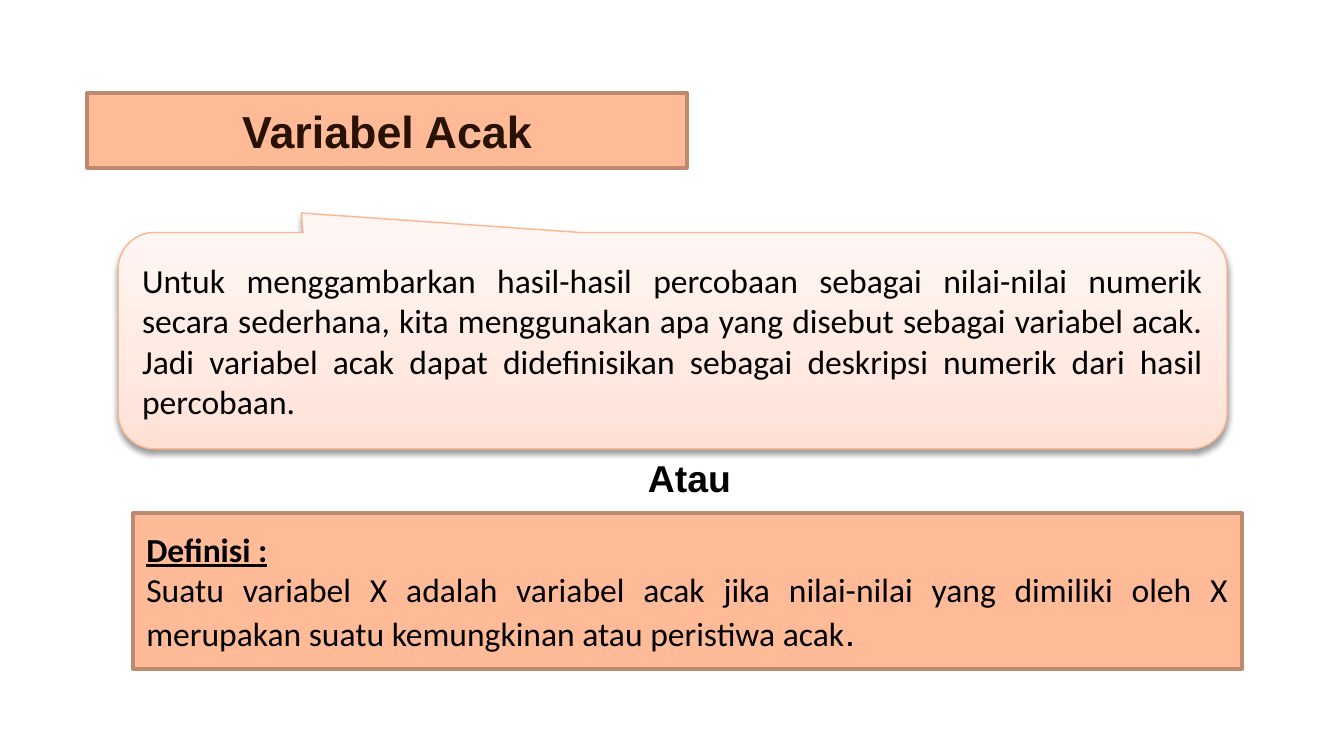
from copy import deepcopy
from dataclasses import dataclass
from typing import Optional

from lxml.etree import SubElement
from pptx import Presentation
from pptx.dml.color import RGBColor as Color
from pptx.enum.shapes import MSO_SHAPE as Shape
from pptx.enum.text import MSO_ANCHOR as Anchor, MSO_AUTO_SIZE as AutoSize, PP_ALIGN as Align
from pptx.oxml.ns import qn
from pptx.util import Inches, Pt


@dataclass(frozen=True)
class Theme:
    heading_font: str = "Arial"
    body_font: str = "Calibri"
    heading_size: int = 24
    link_size: int = 20
    body_size: int = 18
    ink: str = "000000"
    heading_ink: str = "291202"
    panel: str = "FFBB98"
    panel_edge: str = "BD8A70"
    callout_edge: str = "FCB692"
    callout_stops: tuple = ((0, "FFE0D4"), (0.35, "FFE9E0"), (1, "FFF6F3"))


THEME = Theme()
PAGE_WIDTH = 10
PAGE_HEIGHT = PAGE_WIDTH * 9 / 16


@dataclass(frozen=True)
class Span:
    text: str
    format: dict


@dataclass(frozen=True)
class Box:
    left: float
    top: float
    width: float
    height: float
    paragraphs: list[list[Span]]
    align: Align
    shape: Optional[Shape] = Shape.RECTANGLE
    edge: str = THEME.panel_edge
    edge_width: float = 2
    adjustments: tuple = ()


def style(name: str, size: int, ink: str = THEME.ink, **extra) -> dict:
    return {"name": name, "size": Pt(size), "color": ink, **extra}


HEADING = style(THEME.heading_font, THEME.heading_size, THEME.heading_ink, bold=True)
LINK = style(THEME.heading_font, THEME.link_size, bold=True)
BODY = style(THEME.body_font, THEME.body_size)
TERM = {**BODY, "bold": True, "underline": True}
FULL_STOP = style(THEME.heading_font, THEME.link_size)

TITLE = Box(0.65, 0.69, 4.46, 0.56, [[Span("Variabel Acak", HEADING)]], Align.CENTER)
CALLOUT = Box(
    0.88, 1.73, 8.25, 1.61,
    [[Span(
        "Untuk menggambarkan hasil-hasil percobaan sebagai nilai-nilai numerik "
        "secara sederhana, kita menggunakan apa yang disebut sebagai variabel acak. "
        "Jadi variabel acak dapat didefinisikan sebagai deskripsi numerik dari hasil "
        "percobaan.", BODY)]],
    Align.JUSTIFY, Shape.ROUNDED_RECTANGULAR_CALLOUT, THEME.callout_edge, 0.75,
    (-0.335, -0.59, 0.167),
)
DEFINITION = Box(
    0.99, 3.82, 8.25, 1.16,
    [
        [Span("Definisi :", TERM)],
        [
            Span("Suatu variabel X adalah variabel acak jika nilai-nilai yang dimiliki "
                 "oleh X merupakan suatu kemungkinan atau peristiwa acak", BODY),
            Span(".", FULL_STOP),
        ],
    ],
    Align.JUSTIFY,
)
OR_LABEL = Box(4.49, 3.34, 1.28, 0.44, [[Span("Atau", LINK)]], Align.CENTER, None)


def write(frame, box: Box) -> None:
    frame.word_wrap = True
    for index, spans in enumerate(box.paragraphs):
        para = frame.add_paragraph() if index else frame.paragraphs[0]
        para.alignment = box.align
        for span in spans:
            run = para.add_run()
            run.text = span.text
            for key, value in span.format.items():
                if key == "color":
                    run.font.color.rgb = Color.from_string(value)
                else:
                    setattr(run.font, key, value)


def draw_box(slide, box: Box):
    lengths = [Inches(value) for value in (box.left, box.top, box.width, box.height)]
    if box.shape is None:
        item = slide.shapes.add_textbox(*lengths)
        item.text_frame.auto_size = AutoSize.SHAPE_TO_FIT_TEXT
    else:
        item = slide.shapes.add_shape(box.shape, *lengths)
        item.shadow.inherit = False
        item.fill.solid()
        item.fill.fore_color.rgb = Color.from_string(THEME.panel)
        item.line.color.rgb = Color.from_string(box.edge)
        item.line.width = Pt(box.edge_width)
        item.text_frame.vertical_anchor = Anchor.MIDDLE
        for index, value in enumerate(box.adjustments):
            item.adjustments[index] = value
    write(item.text_frame, box)
    return item


def add_gradient(item) -> None:
    item.fill.gradient()
    item.fill.gradient_angle = 90
    stops = item.element.spPr.find(qn("a:gradFill")).find(qn("a:gsLst"))
    stops.insert(1, deepcopy(stops[0]))
    for element, stop, (position, color) in zip(
        stops, item.fill.gradient_stops, THEME.callout_stops
    ):
        element.set("pos", str(round(position * 100000)))
        stop.color.rgb = Color.from_string(color)


def add_shadow(item) -> None:
    effects = item.element.spPr.find(qn("a:effectLst"))
    shadow = SubElement(
        effects, qn("a:outerShdw"), blurRad=str(Pt(3.1)), dist=str(Pt(1.6)),
        dir="5400000", rotWithShape="0",
    )
    color = SubElement(shadow, qn("a:srgbClr"), val=THEME.ink)
    SubElement(color, qn("a:alpha"), val="38000")


def main() -> None:
    deck = Presentation()
    deck.slide_width, deck.slide_height = Inches(PAGE_WIDTH), Inches(PAGE_HEIGHT)
    slide = deck.slides.add_slide(deck.slide_layouts[6])
    draw_box(slide, TITLE)
    callout = draw_box(slide, CALLOUT)
    add_gradient(callout)
    add_shadow(callout)
    draw_box(slide, DEFINITION)
    draw_box(slide, OR_LABEL)
    deck.save("out.pptx")


if __name__ == "__main__":
    main()
